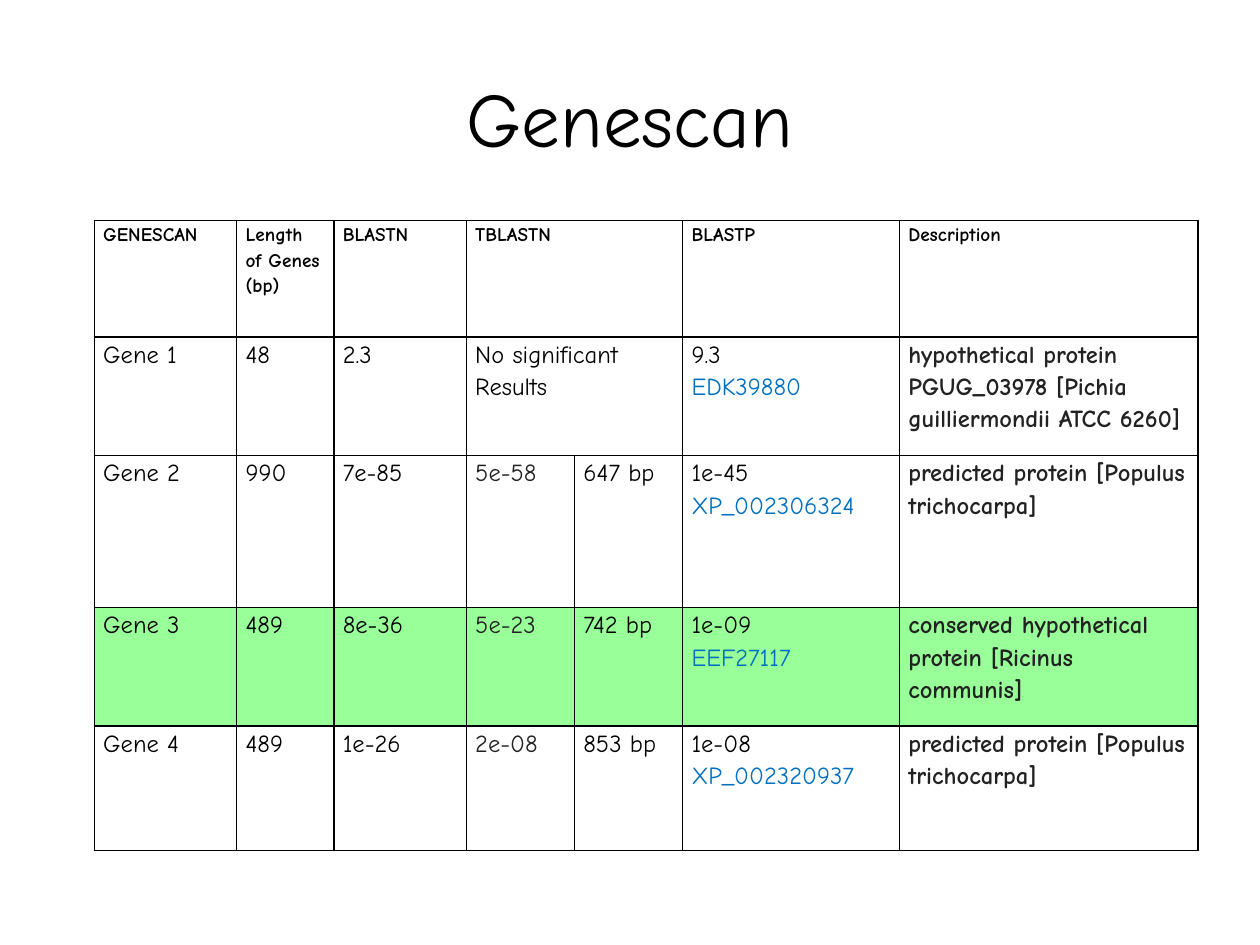
"""Build the Genescan slide: a title above a table of gene search results."""
from lxml import etree
from pptx import Presentation
from pptx.dml.color import RGBColor
from pptx.enum import text
from pptx.oxml import ns
from pptx.util import Cm, Pt

TITLE = "Genescan"
HEADER = ("GENESCAN", "Length of Genes (bp)", "BLASTN", "TBLASTN", None, "BLASTP", "Description")
GENES = [
    ("Gene 1", "48", "2.3", "No significant Results", None, ("9.3", "EDK39880"),
     "hypothetical protein PGUG_03978 [Pichia guilliermondii ATCC 6260]"),
    ("Gene 2", "990", "7e-85", "5e-58", "647 bp", ("1e-45", "XP_002306324"),
     "predicted protein [Populus trichocarpa]"),
    ("Gene 3", "489", "8e-36", "5e-23", "742 bp", ("1e-09", "EEF27117"),
     "conserved hypothetical protein [Ricinus communis]"),
    ("Gene 4", "489", "1e-26", "2e-08", "853 bp", ("1e-08", "XP_002320937"),
     "predicted protein [Populus trichocarpa]"),
]
HIGHLIGHTED_GENE = "Gene 3"
COLUMN_WIDTHS = (2.87, 1.96, 2.67, 2.18, 2.18, 4.37, 6.02)
ROW_HEIGHTS = (2.34, 2.39, 3.07, 2.39, 2.51)
TBLASTN_COLUMN, DESCRIPTION_COLUMN = 3, 6
COLORS = {"text": "000000", "dark": "222222", "accession": "0070C0",
          "highlight": "99FF99", "border": "000000"}
FONT = "Comic Neue"


def add_run(paragraph, words, size, color="text", bold=False):
    run = paragraph.add_run()
    run.text = words
    run.font.name = FONT
    run.font.size = Pt(size)
    run.font.bold = bold
    run.font.color.rgb = RGBColor.from_string(COLORS[color])


def add_borders(cell):
    properties = cell._tc.get_or_add_tcPr()
    for side in ("lnL", "lnR", "lnT", "lnB"):
        line = etree.SubElement(properties, ns.qn(f"a:{side}"), w=str(Pt(1)))
        fill = etree.SubElement(line, ns.qn("a:solidFill"))
        etree.SubElement(fill, ns.qn("a:srgbClr"), val=COLORS["border"])


def fill_cell(cell, highlighted):
    if highlighted:
        cell.fill.solid()
        cell.fill.fore_color.rgb = RGBColor.from_string(COLORS["highlight"])
    else:
        cell.fill.background()


def write_cell(cell, content, column, is_header, is_merged):
    cell.margin_left = cell.margin_right = Cm(0.18)
    cell.margin_top = cell.margin_bottom = 0
    lines = (content,) if isinstance(content, str) else content
    is_description = column == DESCRIPTION_COLUMN
    is_dark = is_description or (column == TBLASTN_COLUMN and not is_merged)
    for index, words in enumerate(lines):
        frame = cell.text_frame
        paragraph = frame.add_paragraph() if index else frame.paragraphs[0]
        paragraph.line_spacing = 1.15
        if is_header:
            add_run(paragraph, words, 11, bold=True)
        else:
            color = "accession" if index else "dark" if is_dark else "text"
            add_run(paragraph, words, 14, color, is_description)


def add_title(slide):
    title = slide.shapes.title
    title.left, title.top, title.width, title.height = Cm(1.27), Cm(0.76), Cm(22.86), Cm(3.18)
    title.text_frame.vertical_anchor = text.MSO_ANCHOR.MIDDLE
    paragraph = title.text_frame.paragraphs[0]
    paragraph.alignment = text.PP_ALIGN.CENTER
    add_run(paragraph, TITLE, 44)


def add_gene_table(slide):
    rows = [HEADER, *GENES]
    frame = slide.shapes.add_table(len(rows), len(HEADER), Cm(1.9), Cm(4.45),
                                   Cm(sum(COLUMN_WIDTHS)), Cm(sum(ROW_HEIGHTS)))
    table = frame.table
    table.first_row = table.horz_banding = False
    for column, width in zip(table.columns, COLUMN_WIDTHS):
        column.width = Cm(width)
    for row, height in zip(table.rows, ROW_HEIGHTS):
        row.height = Cm(height)
    for row_index, row in enumerate(rows):
        for column_index, content in enumerate(row):
            cell = table.cell(row_index, column_index)
            add_borders(cell)
            fill_cell(cell, row[0] == HIGHLIGHTED_GENE)
            if content is None:
                table.cell(row_index, column_index - 1).merge(cell)
            else:
                is_merged = None in row[column_index + 1:column_index + 2]
                write_cell(cell, content, column_index, row is HEADER, is_merged)


def main():
    presentation = Presentation()
    presentation.slide_width, presentation.slide_height = Cm(25.4), Cm(19.05)
    slide = presentation.slides.add_slide(presentation.slide_layouts[5])
    add_title(slide)
    add_gene_table(slide)
    presentation.save("out.pptx")


if __name__ == "__main__":
    main()
